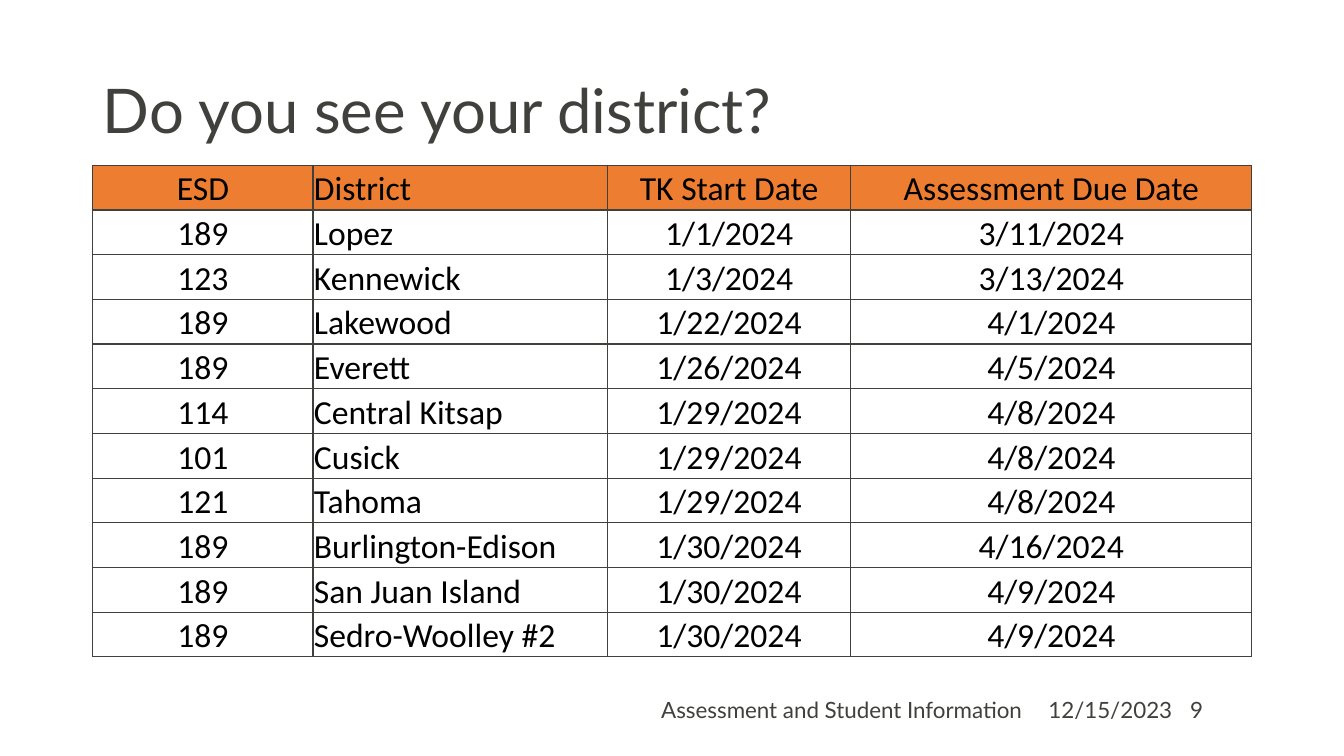
from lxml import etree
from pptx import Presentation
from pptx.dml.color import RGBColor
from pptx.enum.text import MSO_ANCHOR, PP_ALIGN
from pptx.oxml.ns import qn
from pptx.util import Inches, Pt

LEFT, CENTER, RIGHT = PP_ALIGN.LEFT, PP_ALIGN.CENTER, PP_ALIGN.RIGHT
MIDDLE, BOTTOM = MSO_ANCHOR.MIDDLE, MSO_ANCHOR.BOTTOM
WIDE, HIGH = Inches(13.33), Inches(7.5)
INK, BLACK, ORANGE = "40403D", "000000", "ED7D31"

# Boxes are left, top, width, height in percent of the slide
TITLE = (6.9, 5.33, 86.25, 19.33)
GRID = (6.9, 21.87, 86.25, 65.07)
FOOT = (29.1, 91.2, 64, 5.33)

COLS = (19, 25.4, 21, 34.6)  # percent of the table width
ALIGNS = (CENTER, LEFT, CENTER, CENTER)
ROWS = (
    ("ESD", "District", "TK Start Date", "Assessment Due Date"),
    ("189", "Lopez", "1/1/2024", "3/11/2024"),
    ("123", "Kennewick", "1/3/2024", "3/13/2024"),
    ("189", "Lakewood", "1/22/2024", "4/1/2024"),
    ("189", "Everett", "1/26/2024", "4/5/2024"),
    ("114", "Central Kitsap", "1/29/2024", "4/8/2024"),
    ("101", "Cusick", "1/29/2024", "4/8/2024"),
    ("121", "Tahoma", "1/29/2024", "4/8/2024"),
    ("189", "Burlington-Edison", "1/30/2024", "4/16/2024"),
    ("189", "San Juan Island", "1/30/2024", "4/9/2024"),
    ("189", "Sedro-Woolley #2", "1/30/2024", "4/9/2024"),
)
# Text, offset from the footer box, width, alignment
NOTES = (
    ("Assessment and Student Information", 0, 47.7, RIGHT),
    ("12/15/2023", 47.25, 12.52, CENTER),
    ("9", 58.72, 5.25, LEFT),
)
INSETS = {
    "margin_left": Inches(0.01),
    "margin_top": Inches(0.01),
    "margin_right": Inches(0.01),
    "margin_bottom": 0,
    "vertical_anchor": BOTTOM,
}


def color(code):
    return RGBColor.from_string(code)


def place(box):
    x, y, w, h = box
    return [int(part * size / 100)
            for part, size in ((x, WIDE), (y, HIGH), (w, WIDE), (h, HIGH))]


def write(frame, text, size, face, ink, align):
    para = frame.paragraphs[0]
    para.alignment = align
    run = para.add_run()
    run.text = text
    style = {"size": Pt(size), "name": face, "bold": False}
    for key, value in style.items():
        setattr(run.font, key, value)
    run.font.color.rgb = color(ink)
    return para


def label(slide, box, text, size, align=LEFT):
    frame = slide.shapes.add_textbox(*place(box)).text_frame
    frame.word_wrap = True
    frame.vertical_anchor = MIDDLE
    return write(frame, text, size, "Lato", INK, align)


def edge(cell):
    props = cell._tc.get_or_add_tcPr()
    for side in ("lnL", "lnR", "lnT", "lnB"):
        line = etree.SubElement(props, qn("a:" + side), w=str(Pt(1)))
        fill = etree.SubElement(line, qn("a:solidFill"))
        etree.SubElement(fill, qn("a:srgbClr"), val=INK)


def head(slide, box):
    label(slide, box, "Do you see your district?", 44).line_spacing = 0.9


def grid(slide, box):
    spot = place(box)
    table = slide.shapes.add_table(len(ROWS), len(COLS), *spot).table
    table.first_row = table.horz_banding = False
    for col, share in zip(table.columns, COLS):
        col.width = int(spot[2] * share / 100)
    for r, row in enumerate(ROWS):
        table.rows[r].height = spot[3] // len(ROWS)
        for c, text in enumerate(row):
            cell = table.cell(r, c)
            for key, value in INSETS.items():
                setattr(cell, key, value)
            edge(cell)
            if r == 0:
                cell.fill.solid()
                cell.fill.fore_color.rgb = color(ORANGE)
            else:
                cell.fill.background()
            write(cell.text_frame, text, 24, "Calibri", BLACK, ALIGNS[c])


def foot(slide, box):
    x, y, _, h = box
    for text, shift, width, align in NOTES:
        label(slide, (x + shift, y, width, h), text, 16, align)


def main():
    deck = Presentation()
    deck.slide_width, deck.slide_height = WIDE, HIGH
    slide = deck.slides.add_slide(deck.slide_layouts[6])
    head(slide, TITLE)
    grid(slide, GRID)
    foot(slide, FOOT)
    deck.save("out.pptx")


if __name__ == "__main__":
    main()
